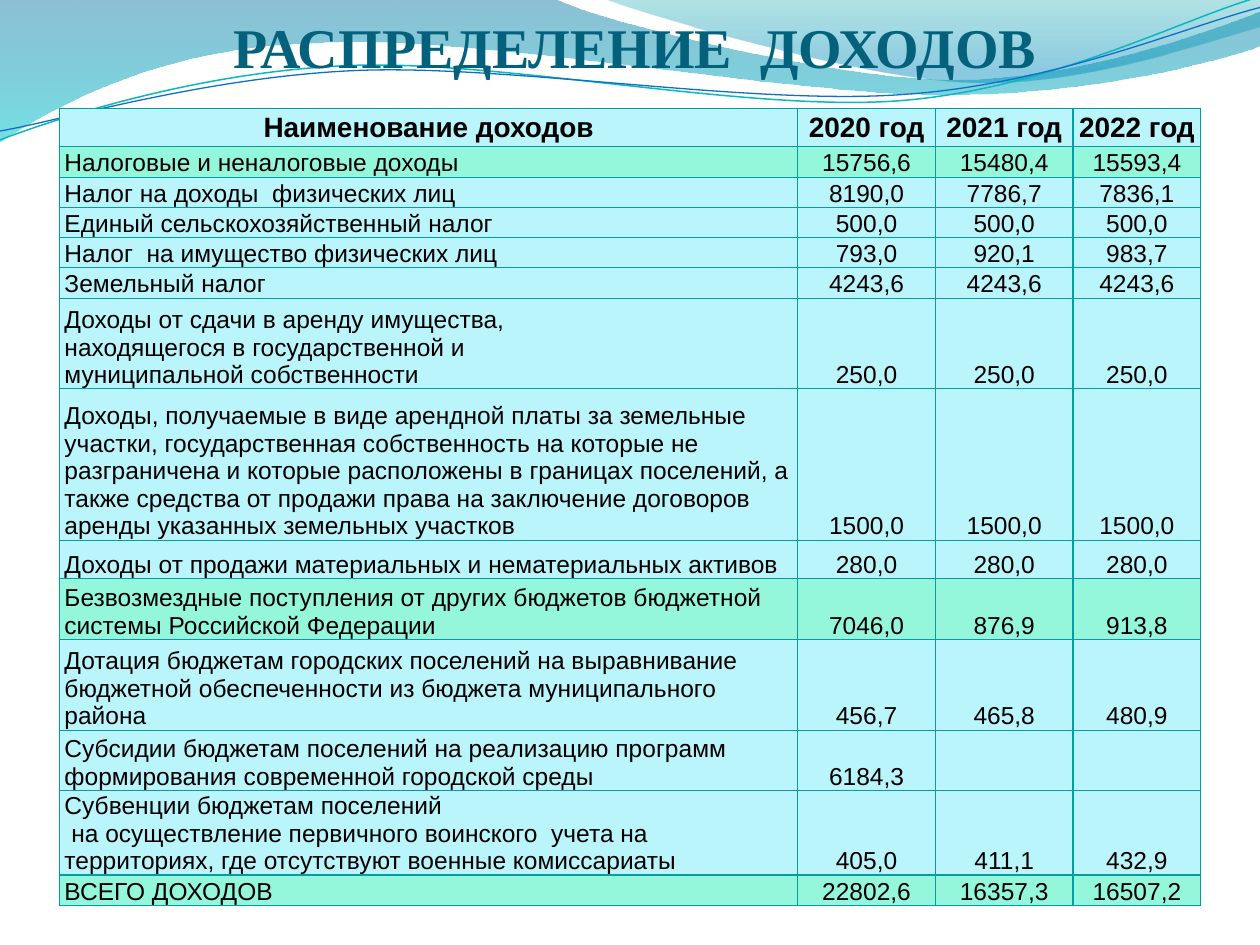
from dataclasses import dataclass
from math import cos, radians, sin

from lxml.etree import SubElement
from pptx import Presentation
from pptx.dml.color import RGBColor
from pptx.enum.text import MSO_ANCHOR as Anchor, PP_ALIGN as Align
from pptx.oxml import parse_xml
from pptx.oxml.ns import nsdecls, qn
from pptx.util import Cm, Pt

COLORS = {
    "title": "04617B", "text": "000000", "cell": "B9F5FB", "total": "94F7DC",
    "border": "069CA3", "teal_line": "0AB8BF", "blue_line": "0F6FC6",
    "deep_blue": "0074A1", "cyan": "00C6CF", "teal": "00A1A9", "blue": "008BBF",
}
UNIT = Cm(2.54)
TILT = -2.7


@dataclass
class Stop:
    position: float
    color: str
    opacity: int


@dataclass
class Band:
    segments: list[tuple[float, ...]]
    stops: tuple[Stop, Stop]


@dataclass
class Ribbon:
    segments: list[tuple[float, ...]]
    center: tuple[float, float]
    color: str
    width: float


@dataclass
class Income:
    name: str
    values: tuple[str, str, str]
    height: float = 0.61
    total: bool = False


BANDS = [
    Band([(0, 0), (4.4, -0.01), (4.76, 0.17, 6.64, 0.63, 7.58, 0.63),
          (8.53, 0.63, 9.58, 0.26, 10, 0.09), (10.01, 0.36),
          (9.83, 0.44, 8.7, 0.76, 7.46, 0.75), (6.22, 0.75, 3.82, 0.28, 2.57, 0.34),
          (1.29, 0.36, 0.46, 0.83, -0.01, 1.13)],
         (Stop(0, "deep_blue", 45), Stop(1, "cyan", 55))),
    Band([(4.79, -0.01), (5.09, 0.11, 6.82, 0.62, 7.69, 0.65),
          (8.56, 0.69, 9.61, 0.32, 10, 0.21), (10, 0)],
         (Stop(0, "teal", 30), Stop(0.8, "blue", 45))),
]
RIBBONS = [
    Ribbon([(0, 1.11), (0.48, 0.93, 1.58, 0.57, 2.77, 0.52),
            (3.95, 0.47, 5.93, 0.89, 7.13, 0.8), (8.33, 0.71, 9.38, 0.15, 9.98, -0.02)],
           (4.99, 0.57), "teal_line", 0.85),
    Ribbon([(0, 1.04), (0.47, 0.96, 1.64, 0.61, 2.83, 0.56),
            (4.03, 0.51, 5.97, 0.84, 7.17, 0.75), (8.36, 0.67, 9.41, 0.21, 10, 0.06)],
           (5, 0.59), "blue_line", 0.75),
]
HEADER = Income("Наименование доходов", ("2020 год", "2021 год", "2022 год"), 0.78)
INCOMES = [
    Income("Налоговые и неналоговые доходы", ("15756,6", "15480,4", "15593,4"), total=True),
    Income("Налог на доходы  физических лиц", ("8190,0", "7786,7", "7836,1")),
    Income("Единый сельскохозяйственный налог", ("500,0", "500,0", "500,0")),
    Income("Налог  на имущество физических лиц", ("793,0", "920,1", "983,7")),
    Income("Земельный налог", ("4243,6", "4243,6", "4243,6")),
    Income("Доходы от сдачи в аренду имущества,\nнаходящегося в государственной и\n"
           "муниципальной собственности", ("250,0", "250,0", "250,0"), 1.83),
    Income("Доходы, получаемые в виде арендной платы за земельные участки, "
           "государственная собственность на которые не разграничена и которые "
           "расположены в границах поселений, а также средства от продажи права на "
           "заключение договоров аренды указанных земельных участков",
           ("1500,0", "1500,0", "1500,0"), 3.05),
    Income("Доходы от продажи материальных и нематериальных активов",
           ("280,0", "280,0", "280,0"), 0.78),
    Income("Безвозмездные поступления от других бюджетов бюджетной системы "
           "Российской Федерации", ("7046,0", "876,9", "913,8"), 1.22, True),
    Income("Дотация бюджетам городских поселений на выравнивание бюджетной "
           "обеспеченности из бюджета муниципального района",
           ("456,7", "465,8", "480,9"), 1.83),
    Income("Субсидии бюджетам поселений на реализацию программ формирования "
           "современной городской среды", ("6184,3", "", ""), 1.22),
    Income("Субвенции бюджетам поселений\n на осуществление первичного воинского  учета "
           "на территориях, где отсутствуют военные комиссариаты",
           ("405,0", "411,1", "432,9"), 1.7),
    Income("ВСЕГО ДОХОДОВ", ("22802,6", "16357,3", "16507,2"), total=True),
]
COLUMN_WIDTHS = (14.88, 2.78, 2.77, 2.58)


def color(name: str) -> RGBColor:
    return RGBColor.from_string(COLORS[name])


def turn(segment: tuple[float, ...], center: tuple[float, float],
         degrees: float) -> tuple[float, ...]:
    angle = radians(degrees)
    turned = []
    for x, y in zip(segment[::2], segment[1::2]):
        x, y = x - center[0], y - center[1]
        turned += [center[0] + x * cos(angle) - y * sin(angle),
                   center[1] + x * sin(angle) + y * cos(angle)]
    return tuple(turned)


def draw_outline(slide, segments: list[tuple[float, ...]], close: bool):
    corners = [(x * UNIT, y * UNIT) for segment in segments
               for x, y in zip(segment[::2], segment[1::2])]
    builder = slide.shapes.build_freeform(*corners[0])
    builder.add_line_segments(corners[1:], close=close)
    shape = builder.convert_to_shape()
    shape.shadow.inherit = False
    lines = iter(list(shape._element.spPr.iter(qn("a:lnTo"))))
    for segment in segments[1:]:
        group = [next(lines) for _ in range(len(segment) // 2)]
        if len(group) == 3:
            curve = parse_xml(f'<a:cubicBezTo {nsdecls("a")}/>')
            group[0].addprevious(curve)
            for line in group:
                curve.append(line[0])
                line.getparent().remove(line)
    return shape


def draw_band(slide, band: Band) -> None:
    shape = draw_outline(slide, band.segments, True)
    shape.line.fill.background()
    shape.fill.gradient()
    shape.fill.gradient_angle = 270
    for target, stop in zip(shape.fill.gradient_stops, band.stops):
        target.position = stop.position
        target.color.rgb = color(stop.color)
    for node, stop in zip(shape._element.spPr.iter(qn("a:srgbClr")), band.stops):
        SubElement(node, qn("a:alpha"), val=str(stop.opacity * 1000))


def draw_ribbon(slide, ribbon: Ribbon) -> None:
    level = [turn(segment, ribbon.center, -TILT) for segment in ribbon.segments]
    shape = draw_outline(slide, level, False)
    shape.rotation = TILT
    shape.fill.background()
    shape.line.color.rgb = color(ribbon.color)
    shape.line.width = Pt(ribbon.width)


def format_text(frame, font_name: str, size: float, color_name: str,
                bold: bool, align: Align) -> None:
    for para in frame.paragraphs:
        para.alignment = align
        for span in para.runs:
            span.font.name = font_name
            span.font.size = Pt(size)
            span.font.bold = bold
            span.font.color.rgb = color(color_name)


def add_borders(cell) -> None:
    properties = cell._tc.get_or_add_tcPr()
    for index, side in enumerate("LRTB"):
        properties.insert(index, parse_xml(
            f'<a:ln{side} {nsdecls("a")} w="{Pt(0.75)}"><a:solidFill>'
            f'<a:srgbClr val="{COLORS["border"]}"/></a:solidFill></a:ln{side}>'))


def fill_row(table, index: int, income: Income) -> None:
    heading = income is HEADER
    table.rows[index].height = Cm(income.height)
    for column, text in enumerate((income.name, *income.values)):
        cell = table.cell(index, column)
        cell.text_frame.text = text
        cell.margin_left = cell.margin_right = Cm(0.1)
        cell.margin_top = cell.margin_bottom = 0
        cell.vertical_anchor = Anchor.MIDDLE if heading else Anchor.BOTTOM
        align = Align.CENTER if heading or column else Align.LEFT
        format_text(cell.text_frame, "Arial", 16 if heading else 14, "text", heading, align)
        cell.fill.solid()
        cell.fill.fore_color.rgb = color("total" if income.total else "cell")
        add_borders(cell)


def draw_table(slide, incomes: list[Income]) -> None:
    table = slide.shapes.add_table(
        len(incomes), len(COLUMN_WIDTHS), Cm(1.2), Cm(2.18), Cm(sum(COLUMN_WIDTHS)),
        Cm(sum(income.height for income in incomes))).table
    table.first_row = table.horz_banding = False
    for column, width in zip(table.columns, COLUMN_WIDTHS):
        column.width = Cm(width)
    for index, income in enumerate(incomes):
        fill_row(table, index, income)


def place_title(slide, text: str) -> None:
    title = slide.shapes.title
    slide.shapes._spTree.append(title._element)
    title.left, title.top, title.width, title.height = Cm(1.27), Cm(0.43), Cm(23.06), Cm(1)
    frame = title.text_frame
    frame.text = text
    frame.margin_left = frame.margin_right = frame.margin_top = frame.margin_bottom = 0
    frame.vertical_anchor = Anchor.MIDDLE
    format_text(frame, "Times New Roman", 32, "title", True, Align.CENTER)


def main() -> None:
    deck = Presentation()
    deck.slide_width, deck.slide_height = Cm(25.4), Cm(19.05)
    slide = deck.slides.add_slide(deck.slide_layouts[5])
    for band in BANDS:
        draw_band(slide, band)
    for ribbon in RIBBONS:
        draw_ribbon(slide, ribbon)
    place_title(slide, "РАСПРЕДЕЛЕНИЕ  ДОХОДОВ")
    draw_table(slide, [HEADER, *INCOMES])
    deck.save("out.pptx")


if __name__ == "__main__":
    main()
